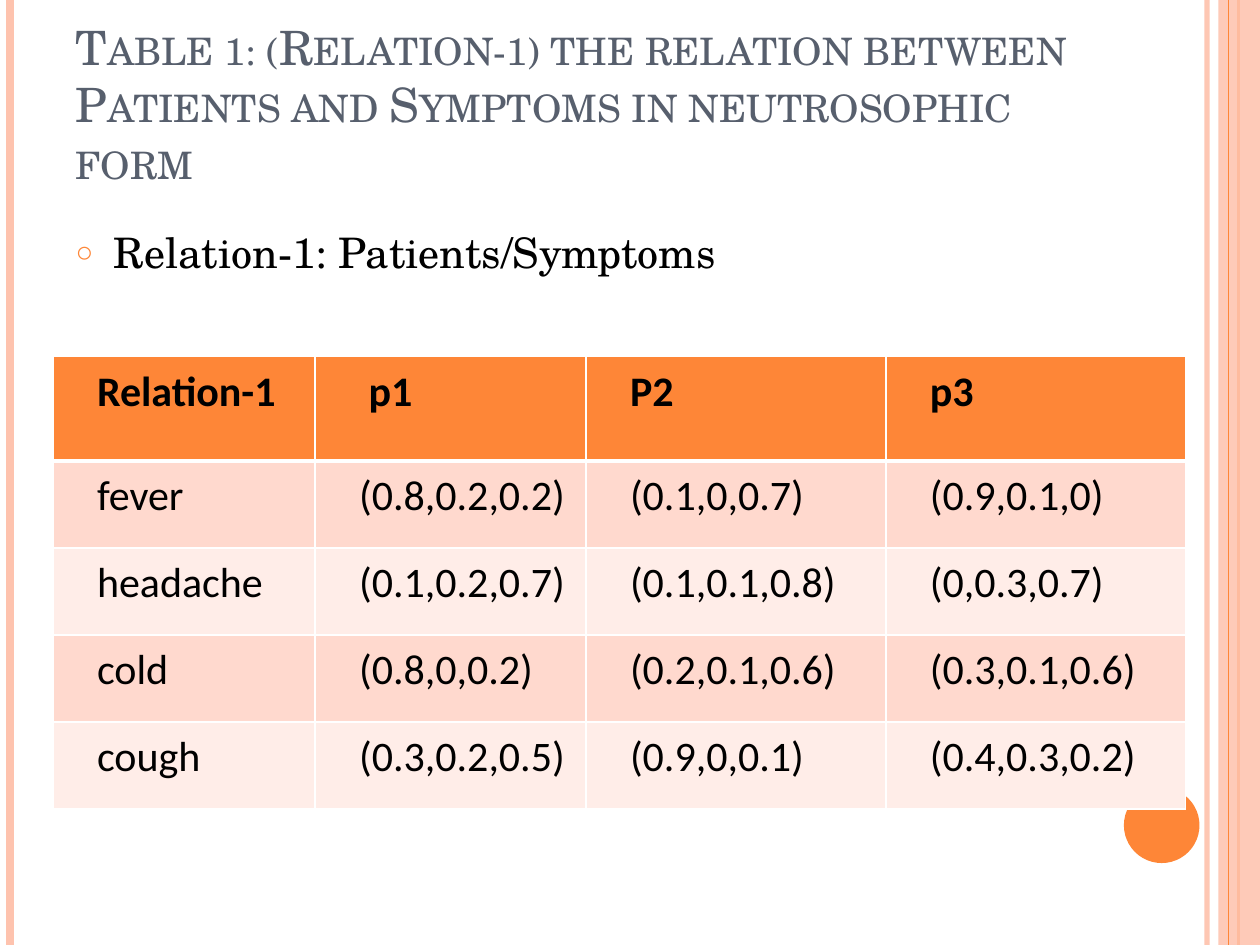
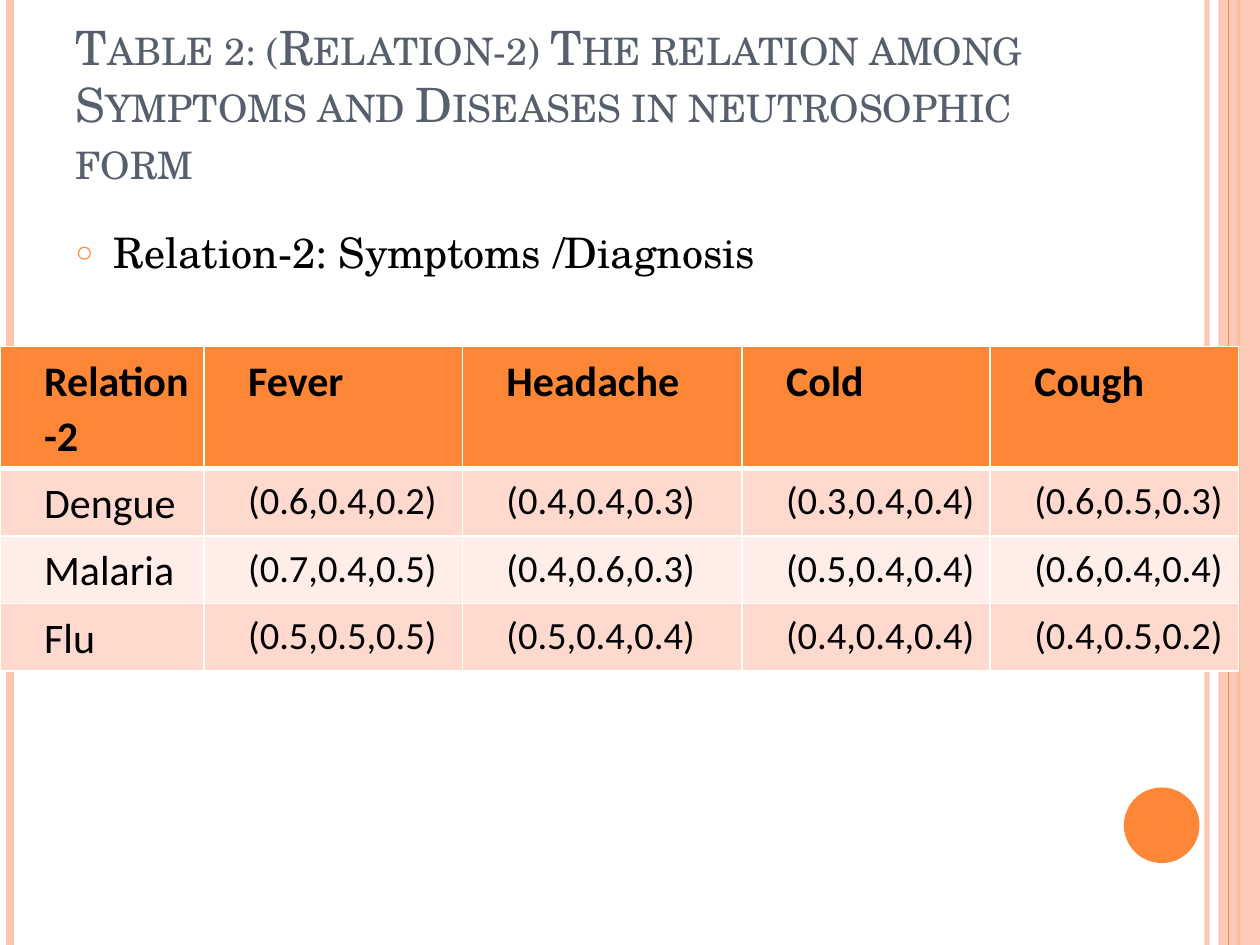
from pptx import Presentation
from pptx.dml.color import RGBColor
from pptx.enum.shapes import MSO_CONNECTOR, MSO_SHAPE
from pptx.enum.text import MSO_ANCHOR, MSO_AUTO_SIZE, PP_ALIGN
from pptx.oxml.ns import qn
from pptx.util import Inches, Pt
from lxml import etree

LINE, RECT, OVAL = MSO_CONNECTOR.STRAIGHT, MSO_SHAPE.RECTANGLE, MSO_SHAPE.OVAL
TOP, BOTTOM, LEFT = MSO_ANCHOR.TOP, MSO_ANCHOR.BOTTOM, PP_ALIGN.LEFT
NO_FIT = MSO_AUTO_SIZE.NONE

# Content
SLIDES = [
    {"title": "Table 1: (Relation-1) the relation between Patients and Symptoms "
              "in neutrosophic form",
     "bullet": "Relation-1: Patients/Symptoms",
     "at": (0.42, 2.83), "cols": [2.08, 2.15, 2.38, 2.38],
     "head_height": 0.83, "row_height": 0.69, "value_size": 24,
     "rows": [
         ["Relation-1", " p1", "P2", "p3"],
         ["fever", "(0.8,0.2,0.2)", "(0.1,0,0.7)", "(0.9,0.1,0)"],
         ["headache", "(0.1,0.2,0.7)", "(0.1,0.1,0.8)", "(0,0.3,0.7)"],
         ["cold", "(0.8,0,0.2)", "(0.2,0.1,0.6)", "(0.3,0.1,0.6)"],
         ["cough", "(0.3,0.2,0.5)", "(0.9,0,0.1)", "(0.4,0.3,0.2)"]]},
    {"title": "Table 2: (Relation-2) The relation among Symptoms and Diseases "
              "in neutrosophic form",
     "bullet": "Relation-2: Symptoms /Diagnosis",
     "at": (0, 2.75), "cols": [1.62, 2.05, 2.22, 1.97, 1.97],
     "head_height": 0.82, "row_height": 0.48, "value_size": 22,
     "rows": [
         ["Relation-2", "Fever", "Headache", "Cold", "Cough"],
         ["Dengue", "(0.6,0.4,0.2)", "(0.4,0.4,0.3)", "(0.3,0.4,0.4)", "(0.6,0.5,0.3)"],
         ["Malaria", "(0.7,0.4,0.5)", "(0.4,0.6,0.3)", "(0.5,0.4,0.4)", "(0.6,0.4,0.4)"],
         ["Flu", "(0.5,0.5,0.5)", "(0.5,0.4,0.4)", "(0.4,0.4,0.4)", "(0.4,0.5,0.2)"]]},
]

# Shared look
COLORS = {"accent": "FE8637", "peach": "FEC3AE", "title": "575F6D", "text": "000000",
          "white": "FFFFFF", "band_dark": "FFD9CE", "band_light": "FFEDE8"}
SERIF, SANS = "TeX Gyre Schola", "Calibri"
WIDTH, HEIGHT = 10, 7.5
TITLE_BOX = (0.5, 0.3, 8.17, 1.25)
BODY_BOX = (0.5, 1.75, 8.17, 5.33)
# x, colour, width in points, opacity in percent
RULES_BELOW = [(9.58, "peach", 3, 93), (0.08, "peach", 4.5, 100), (9.83, "accent", 1.5, 100)]
RULES_ABOVE = [(9.75, "accent", 0.75, 100)]
# preset, box, colour, opacity in percent
SIDE_BAND = (RECT, (9.67, 0, 0.33, HEIGHT), "peach", 87)
CORNER_DOT = (OVAL, (8.92, 6.25, 0.6, 0.6), "accent", 100)


def rgb(name):
    return RGBColor.from_string(COLORS[name])


def sub(parent, tag, **attrs):
    return etree.SubElement(parent, qn(tag), {k: str(v) for k, v in attrs.items()})


def set_opacity(element, percent):
    if percent < 100:
        sub(next(element.iter(qn("a:srgbClr"))), "a:alpha", val=percent * 1000)


def add_rules(s, rules):
    for x, color, width, opacity in rules:
        line = s.shapes.add_connector(LINE, Inches(x), 0, Inches(x), Inches(HEIGHT))
        line.line.color.rgb, line.line.width = rgb(color), Pt(width)
        set_opacity(line._element.spPr, opacity)
        sub(line._element.spPr, "a:effectLst")


def add_block(s, preset, box, color, opacity):
    shape = s.shapes.add_shape(preset, *map(Inches, box))
    shape.shadow.inherit = False
    shape.fill.solid()
    shape.fill.fore_color.rgb = rgb(color)
    shape.line.fill.background()
    set_opacity(shape._element.spPr, opacity)


def add_frame(s):
    add_rules(s, RULES_BELOW)
    add_block(s, *SIDE_BAND)
    add_rules(s, RULES_ABOVE)
    add_block(s, *CORNER_DOT)


def write(tf, text, color, para=(), **font):
    """Put one formatted run into a text frame and return its paragraph and run."""
    p = tf.paragraphs[0]
    r = p.add_run()
    r.text = text
    r.font.color.rgb = rgb(color)
    for key, value in font.items():
        setattr(r.font, key, value)
    for key, value in dict(para).items():
        setattr(p, key, value)
    return p, r


def place(shape, box, anchor):
    shape.left, shape.top, shape.width, shape.height = map(Inches, box)
    tf = shape.text_frame
    for key, value in {"word_wrap": True, "auto_size": NO_FIT, "vertical_anchor": anchor}.items():
        setattr(tf, key, value)
    return tf


def add_texts(s, title, bullet):
    tf = place(s.shapes.title, TITLE_BOX, BOTTOM)
    p, r = write(tf, title, "title", {"alignment": LEFT}, name=SERIF, size=Pt(27))
    r.font._element.set("cap", "small")

    tf = place(s.placeholders[1], BODY_BOX, TOP)
    p, r = write(tf, bullet, "text", {"space_before": Pt(6)}, name=SERIF, size=Pt(24))
    pPr = p._p.get_or_add_pPr()
    pPr.set("marL", str(Inches(0.3)))
    pPr.set("indent", str(Inches(-0.3)))
    sub(sub(pPr, "a:buClr"), "a:srgbClr", val=COLORS["accent"])
    sub(pPr, "a:buSzPct", val=70000)
    sub(pPr, "a:buChar", char="○")


def set_borders(cell, row):
    """White grid, with a thick rule between the header and the first row."""
    widths = {"a:lnL": 1, "a:lnR": 1, "a:lnT": 3 if row == 1 else 1,
              "a:lnB": 3 if row == 0 else 1}
    tcPr = cell._tc.get_or_add_tcPr()
    for tag, width in widths.items():
        ln = sub(tcPr, tag, w=Pt(width))
        sub(sub(ln, "a:solidFill"), "a:srgbClr", val=COLORS["white"])


def add_relation_table(s, d):
    rows, cols = d["rows"], d["cols"]
    heights = [d["head_height"]] + [d["row_height"]] * (len(rows) - 1)
    box = (*d["at"], sum(cols), sum(heights))
    table = s.shapes.add_table(len(rows), len(cols), *map(Inches, box)).table
    table.first_row = table.horz_banding = False
    for column, width in zip(table.columns, cols):
        column.width = Inches(width)
    for i, (row, height) in enumerate(zip(rows, heights)):
        table.rows[i].height = Inches(height)
        fill = "accent" if i == 0 else "band_dark" if i % 2 else "band_light"
        for j, text in enumerate(row):
            cell = table.cell(i, j)
            set_borders(cell, i)
            cell.fill.solid()
            cell.fill.fore_color.rgb = rgb(fill)
            size = d["value_size"] if i and j else 24
            p, r = write(cell.text_frame, text, "text",
                         {"line_spacing": 1.07, "space_after": Pt(8)},
                         name=SANS, size=Pt(size), bold=i == 0)
            p._p.get_or_add_pPr().set("marL", str(Inches(0.25)))


def main():
    prs = Presentation()
    prs.slide_width, prs.slide_height = Inches(WIDTH), Inches(HEIGHT)
    for d in SLIDES:
        s = prs.slides.add_slide(prs.slide_layouts[1])
        add_frame(s)
        add_texts(s, d["title"], d["bullet"])
        add_relation_table(s, d)
    prs.save("out.pptx")


if __name__ == "__main__":
    main()
